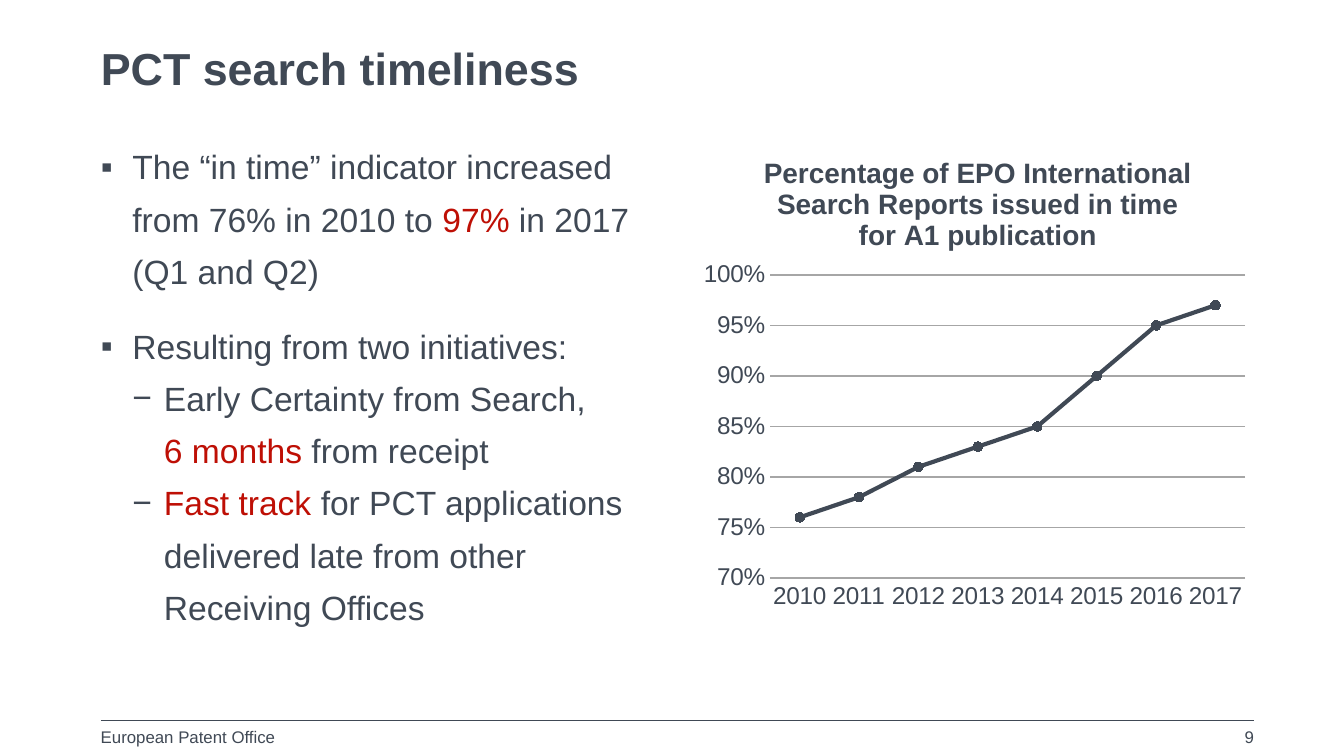
import pptx
import pptx.chart.data
import pptx.dml.color
import pptx.enum.chart
import pptx.enum.shapes
import pptx.enum.text
import pptx.oxml
import pptx.oxml.ns
import pptx.util
from pptx.util import Inches

FONT = "Arial"
SLATE = "404955"
RED = "BE0F05"
GREY = "A6A6A6"
LEFT = 0.75
RIGHT = 9.33
INDENT = 0.47 / 2

# Level, bullet, space before, and (text, colour) runs of each list item
LIST_ITEMS = [
    (0, "▪", 0, [("The “in time” indicator increased from 76% in 2010 to ", SLATE),
                 ("97%", RED), (" in 2017 (Q1 and Q2)", SLATE)]),
    (0, "▪", 12, [("Resulting from two initiatives:", SLATE)]),
    (1, "−", 0, [("Early Certainty from Search,\n", SLATE),
                 ("6 months", RED), (" from receipt", SLATE)]),
    (1, "−", 0, [("Fast track", RED),
                 (" for PCT applications delivered late from other Receiving Offices", SLATE)]),
]
YEARS = [str(year) for year in range(2010, 2018)]
IN_TIME = [0.76, 0.78, 0.81, 0.83, 0.85, 0.9, 0.95, 0.97]


def color(hex_value):
    return pptx.dml.color.RGBColor.from_string(hex_value)


def set_attributes(target, values):
    for name, value in values.items():
        setattr(target, name, value)


def format_font(font, size, hex_value=SLATE, bold=False):
    set_attributes(font, {"name": FONT, "size": pptx.util.Pt(size), "bold": bold})
    font.color.rgb = color(hex_value)


def format_line(line, hex_value, width):
    line.color.rgb = color(hex_value)
    line.width = pptx.util.Pt(width)


def prepare_frame(shape, left, top, width, height, anchor="TOP", wrap=True):
    """Place a text shape and return its frame without margins."""
    set_attributes(shape, {"left": Inches(left), "top": Inches(top),
                           "width": Inches(width), "height": Inches(height)})
    frame = shape.text_frame
    set_attributes(frame, {
        "margin_left": 0, "margin_top": 0, "margin_right": 0, "margin_bottom": 0,
        "word_wrap": wrap,
        "auto_size": pptx.enum.text.MSO_AUTO_SIZE.NONE,
        "vertical_anchor": getattr(pptx.enum.text.MSO_ANCHOR, anchor),
    })
    return frame


def write_line(frame, text, size, align="LEFT", bold=False):
    paragraph = frame.paragraphs[0]
    paragraph.alignment = getattr(pptx.enum.text.PP_ALIGN, align)
    run = paragraph.add_run()
    run.text = text
    format_font(run.font, size, bold=bold)


def add_bullet(paragraph, character, level):
    properties = paragraph._p.get_or_add_pPr()
    properties.set("marL", str(Inches(INDENT * (level + 1))))
    properties.set("indent", str(-Inches(INDENT)))
    namespace = pptx.oxml.ns.nsdecls("a")
    for xml in (f'<a:buClr {namespace}><a:srgbClr val="{SLATE}"/></a:buClr>',
                f'<a:buFont {namespace} typeface="{FONT}"/>',
                f'<a:buChar {namespace} char="{character}"/>'):
        properties.append(pptx.oxml.parse_xml(xml))


def write_list(frame, items):
    for index, (level, bullet, space_before, runs) in enumerate(items):
        paragraph = frame.add_paragraph() if index else frame.paragraphs[0]
        add_bullet(paragraph, bullet, level)
        set_attributes(paragraph, {
            "level": level,
            "line_spacing": pptx.util.Pt(28),
            "space_before": pptx.util.Pt(space_before),
            "space_after": pptx.util.Pt(0),
        })
        for text, hex_value in runs:
            run = paragraph.add_run()
            run.text = text.rstrip("\n")
            format_font(run.font, 18, hex_value)
            if text.endswith("\n"):
                paragraph.add_line_break()


def set_layout(element, position, values):
    """Place a chart part by fractions of the chart."""
    for layout in element.findall(pptx.oxml.ns.qn("c:layout")):
        element.remove(layout)
    children = "".join(f'<c:{name} val="{value}"/>' for name, value in values.items())
    element.insert(position, pptx.oxml.parse_xml(
        f'<c:layout {pptx.oxml.ns.nsdecls("c")}>'
        f'<c:manualLayout>{children}</c:manualLayout></c:layout>'))


def add_line_chart(slide):
    data = pptx.chart.data.CategoryChartData(number_format="0%")
    data.categories = YEARS
    data.add_series("Series 1", IN_TIME)
    chart = slide.shapes.add_chart(
        pptx.enum.chart.XL_CHART_TYPE.LINE_MARKERS,
        Inches(5.14), Inches(1.08), Inches(4.21), Inches(3.58), data).chart
    format_font(chart.font, 10)
    chart.has_legend = False
    chart.has_title = True
    write_line(chart.chart_title.text_frame,
               "Percentage of EPO International Search Reports issued in time "
               "for A1 publication", 15, "CENTER", bold=True)
    chart.chart_title.include_in_layout = False
    edges = {"xMode": "edge", "yMode": "edge"}
    set_layout(chart.chart_title._element, 1, {**edges, "x": 0.12, "y": 0.01})
    set_layout(chart._chartSpace.chart.plotArea, 0,
               {"layoutTarget": "inner", **edges,
                "x": 0.14, "y": 0.27, "w": 0.84, "h": 0.63})

    # Axes and gridlines
    for axis in (chart.category_axis, chart.value_axis):
        axis.major_tick_mark = pptx.enum.chart.XL_TICK_MARK.NONE
        axis.minor_tick_mark = pptx.enum.chart.XL_TICK_MARK.NONE
        format_font(axis.tick_labels.font, 13)
    format_line(chart.category_axis.format.line, GREY, 1)
    value_axis = chart.value_axis
    set_attributes(value_axis, {"minimum_scale": 0.7, "maximum_scale": 1,
                                "major_unit": 0.05, "has_major_gridlines": True})
    set_attributes(value_axis.tick_labels, {"number_format": "0%",
                                            "number_format_is_linked": False})
    value_axis.format.line.fill.background()
    format_line(value_axis.major_gridlines.format.line, GREY, 0.75)

    # Series line and markers
    chart.plots[0].vary_by_categories = False
    series = chart.plots[0].series[0]
    series.smooth = False
    format_line(series.format.line, SLATE, 2.25)
    set_attributes(series.marker, {"style": pptx.enum.chart.XL_MARKER_STYLE.CIRCLE,
                                   "size": 5})
    series.marker.format.fill.solid()
    series.marker.format.fill.fore_color.rgb = color(SLATE)
    format_line(series.marker.format.line, SLATE, 0.75)


def add_rule(slide, top):
    rule = slide.shapes.add_connector(
        pptx.enum.shapes.MSO_CONNECTOR.STRAIGHT,
        Inches(LEFT), Inches(top), Inches(RIGHT), Inches(top))
    format_line(rule.line, SLATE, 0.75)
    rule._element.spPr.append(pptx.oxml.parse_xml(
        f'<a:effectLst {pptx.oxml.ns.nsdecls("a")}/>'))


def add_footer_text(slide, text, left, width, align, wrap=True):
    box = slide.shapes.add_textbox(0, 0, 0, 0)
    frame = prepare_frame(box, left, 5.41, width, 0.19, wrap=wrap)
    write_line(frame, text, 9, align)


def main():
    # Widescreen slide, 16 by 9
    presentation = pptx.Presentation()
    presentation.slide_width = Inches(10)
    presentation.slide_height = Inches(10 * 9 / 16)
    slide = presentation.slides.add_slide(presentation.slide_layouts[1])

    # Title and list
    title = prepare_frame(slide.shapes.title, LEFT, 0.28, RIGHT - LEFT, 0.44, "MIDDLE")
    write_line(title, "PCT search timeliness", 24, bold=True)
    body = prepare_frame(slide.placeholders[1], LEFT, 1, 4.19, 4.17)
    write_list(body, LIST_ITEMS)

    add_line_chart(slide)

    # Footer
    add_rule(slide, 5.36)
    add_footer_text(slide, "European Patent Office", LEFT, 1.7, "LEFT")
    add_footer_text(slide, "9", 8.7, RIGHT - 8.7, "RIGHT", wrap=False)

    presentation.save("out.pptx")


if __name__ == "__main__":
    main()
